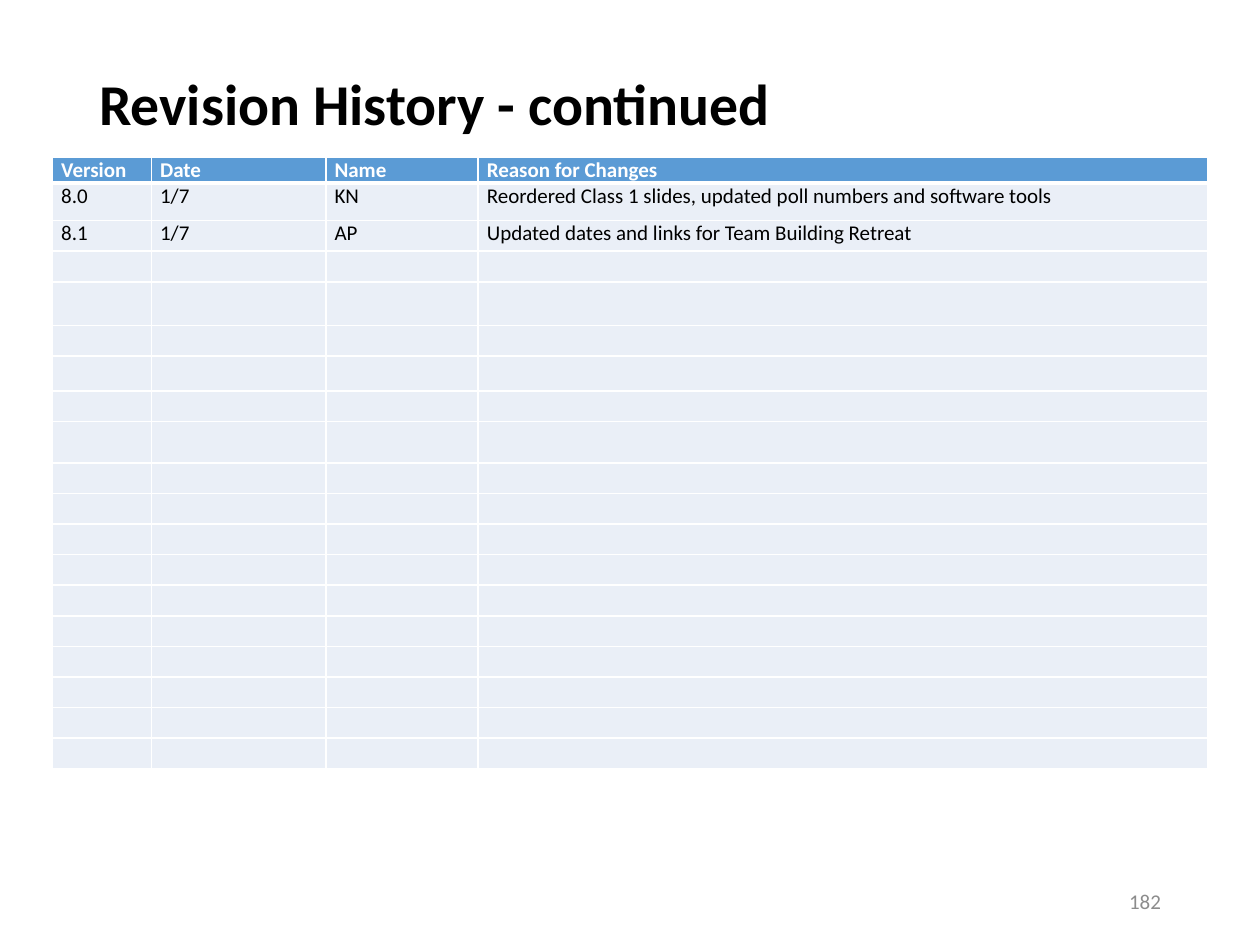
from pptx import Presentation
from pptx import util as u
from pptx.dml.color import RGBColor
from pptx.enum import text
from pptx.oxml import xmlchemy
from lxml import etree

TITLE = "Revision History - continued"
PAGE_NUMBER = "182"
HEADER = ["Version", "Date", "Name", "Reason for Changes"]
REVISIONS = [
    ["8.0", "1/7", "KN", "Reordered Class 1 slides, updated poll numbers and software tools"],
    ["8.1", "1/7", "AP", "Updated dates and links for Team Building Retreat"],
]
ROW_COUNT = 19
COLUMN_WIDTHS = [56.5, 99.75, 87, 417]
ROW_HEIGHT = 17.5
SPECIAL_HEIGHTS = {0: 14, 1: 21.4, 4: 25, 6: 20, 8: 23.5}
COLORS = {"header": "5B9BD5", "row": "EAEFF7", "white": "FFFFFF", "black": "000000", "gray": "8C8C8C"}
FONT = "Calibri"


def style(para, size, color, bold=False):
    para.font.name = FONT
    para.font.size = u.Pt(size)
    para.font.bold = bold
    para.font.color.rgb = RGBColor.from_string(COLORS[color])


def add_bottom_border(cell, width):
    border = xmlchemy.OxmlElement("a:lnB")
    border.set("w", str(u.Pt(width)))
    fill = xmlchemy.OxmlElement("a:solidFill")
    color = xmlchemy.OxmlElement("a:srgbClr")
    color.set("val", COLORS["white"])
    fill.append(color)
    border.append(fill)
    cell._tc.get_or_add_tcPr().insert(0, border)


def fill_cell(cell, content, is_header):
    cell.margin_left = cell.margin_right = u.Pt(5)
    cell.margin_top = cell.margin_bottom = 0
    cell.fill.solid()
    cell.fill.fore_color.rgb = RGBColor.from_string(COLORS["header" if is_header else "row"])
    if is_header:
        add_bottom_border(cell, 3)
    para = cell.text_frame.paragraphs[0]
    if content:
        para.text = content
        style(para, 12, "white" if is_header else "black", is_header)
    else:
        etree.SubElement(para._p, xmlchemy.OxmlElement("a:endParaRPr").tag, sz="1200")


def add_title(page):
    title = page.shapes.title
    title.left, title.top, title.width, title.height = map(u.Pt, (49.5, 28.8, 621, 104.4))
    frame = title.text_frame
    frame.auto_size = text.MSO_AUTO_SIZE.NONE
    frame.vertical_anchor = text.MSO_ANCHOR.TOP
    frame.margin_top = u.Pt(14.25)
    para = frame.paragraphs[0]
    para.text = TITLE
    para.alignment = text.PP_ALIGN.LEFT
    para.line_spacing = 0.9
    style(para, 33, "black", True)


def add_history(page):
    heights = [SPECIAL_HEIGHTS.get(row, ROW_HEIGHT) for row in range(ROW_COUNT)]
    table = page.shapes.add_table(
        ROW_COUNT, len(HEADER), u.Pt(30), u.Pt(90), u.Pt(sum(COLUMN_WIDTHS)), u.Pt(sum(heights))
    ).table
    table.horz_banding = False
    for column, width in zip(table.columns, COLUMN_WIDTHS):
        column.width = u.Pt(width)
    blank_rows = [[""] * len(HEADER)] * (ROW_COUNT - 1 - len(REVISIONS))
    contents = [HEADER] + REVISIONS + blank_rows
    for index, (row, height, values) in enumerate(zip(table.rows, heights, contents)):
        row.height = u.Pt(height)
        for cell, value in zip(row.cells, values):
            fill_cell(cell, value, index == 0)


def add_page_number(page):
    box = page.shapes.add_textbox(*map(u.Pt, (508.5, 500.5, 162, 28.75)))
    frame = box.text_frame
    frame.word_wrap = True
    frame.vertical_anchor = text.MSO_ANCHOR.MIDDLE
    para = frame.paragraphs[0]
    para.text = PAGE_NUMBER
    para.alignment = text.PP_ALIGN.RIGHT
    style(para, 12, "gray")


def main():
    deck = Presentation()
    deck.slide_width, deck.slide_height = u.Pt(720), u.Pt(540)
    page = deck.slides.add_slide(deck.slide_layouts[5])
    add_title(page)
    add_history(page)
    add_page_number(page)
    deck.save("out.pptx")


if __name__ == "__main__":
    main()
